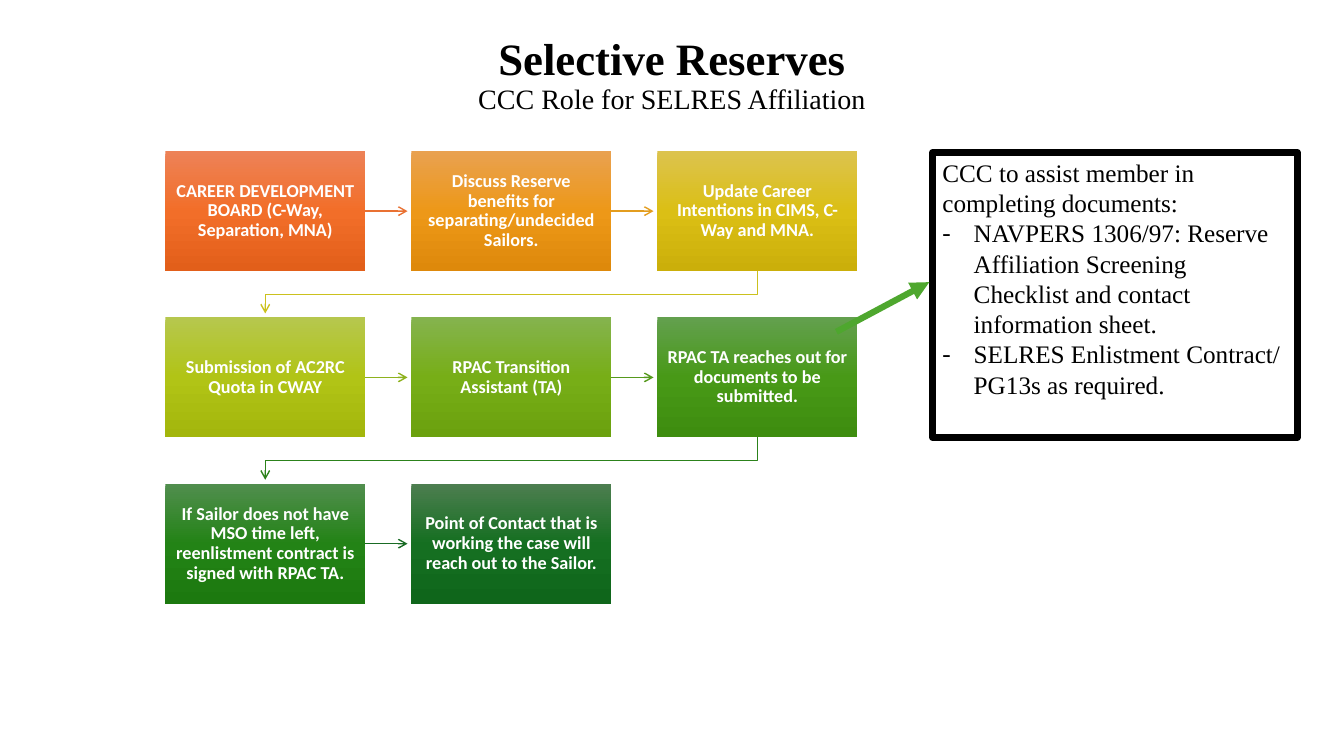
from copy import deepcopy

from lxml import etree
from pptx import Presentation
from pptx.dml.color import RGBColor
from pptx.enum.shapes import MSO_CONNECTOR, MSO_SHAPE
from pptx.enum.text import MSO_ANCHOR, MSO_AUTO_SIZE, PP_ALIGN
from pptx.oxml.ns import qn
from pptx.util import Cm, Pt

RECTANGLE = MSO_SHAPE.RECTANGLE
STRAIGHT = MSO_CONNECTOR.STRAIGHT
CENTER, LEFT = PP_ALIGN.CENTER, PP_ALIGN.LEFT
MIDDLE, TOP = MSO_ANCHOR.MIDDLE, MSO_ANCHOR.TOP
NO_FIT = MSO_AUTO_SIZE.NONE

THEME = {
    "heading_font": "Times New Roman",
    "step_font": "Calibri",
    "title_size": Pt(32),
    "subtitle_size": Pt(20),
    "callout_size": Pt(18),
    "step_size": Pt(13),
    "thin": Pt(1),
    "thick": Pt(4.5),
    "black": "000000",
    "white": "FFFFFF",
    "callout_arrow": "4EA72E",
}

STEPS = [
    ("CAREER DEVELOPMENT BOARD (C-Way, Separation, MNA)",
     ("ED8257", "F26E29", "E25F1A"), "E97132"),
    ("Discuss Reserve benefits for separating/undecided Sailors.",
     ("E9A150", "ED9818", "DE890B"), "E39D1F"),
    ("Update Career Intentions in CIMS, C-Way and MNA.",
     ("DCC34E", "DBBF15", "CBAF0A"), "CBC11E"),
    ("Submission of AC2RC Quota in CWAY",
     ("B6C74E", "B1C416", "A3B60C"), "8EB21E"),
    ("RPAC Transition Assistant (TA)",
     ("85B34E", "77AE17", "6BA10E"), "56991D"),
    ("RPAC TA reaches out for documents to be submitted.",
     ("63A04E", "489917", "3E8D0F"), "2C821B"),
    ("If Sailor does not have MSO time left, reenlistment contract is signed with RPAC TA.",
     ("518E4E", "238316", "1C790F"), "196B24"),
    ("Point of Contact that is working the case will reach out to the Sailor.",
     ("4D7E50", "156F21", "0F661B"), None),
]
COLUMNS = 3
GRID_LEFT, GRID_TOP = Cm(4.17), Cm(3.81)
STEP_WIDTH, STEP_HEIGHT = Cm(5.03), Cm(3.02)
PITCH_X, PITCH_Y = Cm(6.2), Cm(4.19)
ARROW_GAP = Cm(0.1)

CALLOUT = [
    "CCC to assist member in completing documents:",
    "NAVPERS 1306/97: Reserve Affiliation Screening Checklist and contact information sheet.",
    "SELRES Enlistment Contract/ PG13s as required.",
]


def style_arrow(shape, color, width, head):
    shape.line.color.rgb = RGBColor.from_string(color)
    shape.line.width = width
    properties = shape._element.spPr
    etree.SubElement(properties.find(qn("a:ln")), qn("a:tailEnd"), type=head)
    etree.SubElement(properties, qn("a:effectLst"))


def style_text(paragraph, font_name, size, color, alignment):
    paragraph.alignment = alignment
    paragraph.font.name = font_name
    paragraph.font.size = size
    paragraph.font.color.rgb = RGBColor.from_string(color)


presentation = Presentation()
presentation.slide_width, presentation.slide_height = Cm(33.87), Cm(19.05)
slide = presentation.slides.add_slide(presentation.slide_layouts[5])

title = slide.shapes.title
title.left, title.top, title.width, title.height = Cm(0), Cm(0.03), Cm(33.87), Cm(3.76)
title.text_frame.auto_size = NO_FIT
title.text_frame.vertical_anchor = MIDDLE
paragraph = title.text_frame.paragraphs[0]
style_text(paragraph, THEME["heading_font"], THEME["title_size"], THEME["black"], CENTER)
paragraph.line_spacing = 0.9
heading = paragraph.add_run()
heading.text = "Selective Reserves"
heading.font.bold = True
paragraph.add_line_break()
subtitle = paragraph.add_run()
subtitle.text = "CCC Role for SELRES Affiliation"
subtitle.font.size = THEME["subtitle_size"]

for index, (text, gradient, arrow_color) in enumerate(STEPS):
    row, column = divmod(index, COLUMNS)
    left, top = GRID_LEFT + column * PITCH_X, GRID_TOP + row * PITCH_Y
    center_x, center_y = left + STEP_WIDTH // 2, top + STEP_HEIGHT // 2

    step = slide.shapes.add_shape(RECTANGLE, left, top, STEP_WIDTH, STEP_HEIGHT)
    step.shadow.inherit = False
    step.line.fill.background()
    step.fill.gradient()
    step.fill.gradient_angle = 270
    stop_list = step._element.spPr.find(qn("a:gradFill")).find(qn("a:gsLst"))
    stop_list.insert(1, deepcopy(stop_list[0]))
    for stop, position, color in zip(step.fill.gradient_stops, (0, 0.5, 1), gradient):
        stop.position = position
        stop.color.rgb = RGBColor.from_string(color)
    frame = step.text_frame
    frame.word_wrap = True
    frame.vertical_anchor = MIDDLE
    frame.margin_left = frame.margin_right = Cm(0.25)
    frame.margin_top = frame.margin_bottom = Cm(0.25)
    paragraph = frame.paragraphs[0]
    paragraph.text = text
    paragraph.line_spacing = 0.9
    style_text(paragraph, THEME["step_font"], THEME["step_size"], THEME["white"], CENTER)
    paragraph.font.bold = True

    if arrow_color is None:
        continue
    if column < COLUMNS - 1:
        arrow = slide.shapes.add_connector(
            STRAIGHT, left + STEP_WIDTH, center_y, left + PITCH_X - ARROW_GAP, center_y)
    else:
        bottom, next_top = top + STEP_HEIGHT, top + PITCH_Y
        turn_y = (bottom + next_top) // 2
        first_x = GRID_LEFT + STEP_WIDTH // 2
        builder = slide.shapes.build_freeform(center_x, bottom)
        builder.add_line_segments(
            [(center_x, turn_y), (first_x, turn_y), (first_x, next_top - ARROW_GAP)],
            close=False)
        arrow = builder.convert_to_shape()
        arrow.fill.background()
    style_arrow(arrow, arrow_color, THEME["thin"], "arrow")

callout = slide.shapes.add_shape(RECTANGLE, Cm(23.5), Cm(3.84), Cm(9.2), Cm(7.19))
callout.shadow.inherit = False
callout.fill.background()
callout.line.color.rgb = RGBColor.from_string(THEME["black"])
callout.line.width = THEME["thick"]
frame = callout.text_frame
frame.word_wrap = True
frame.auto_size = NO_FIT
frame.vertical_anchor = TOP
for index, text in enumerate(CALLOUT):
    paragraph = frame.add_paragraph() if index else frame.paragraphs[0]
    paragraph.text = text
    if index:
        properties = paragraph._p.get_or_add_pPr()
        properties.set("marL", str(Cm(0.79)))
        properties.set("indent", str(-Cm(0.79)))
        etree.SubElement(properties, qn("a:buFont"), typeface=THEME["heading_font"])
        etree.SubElement(properties, qn("a:buChar"), char="-")
    style_text(paragraph, THEME["heading_font"], THEME["callout_size"], THEME["black"], LEFT)

callout_arrow = slide.shapes.add_connector(STRAIGHT, Cm(21.08), Cm(8.36), Cm(23.42), Cm(7.11))
style_arrow(callout_arrow, THEME["callout_arrow"], THEME["thick"], "triangle")

presentation.save("out.pptx")
